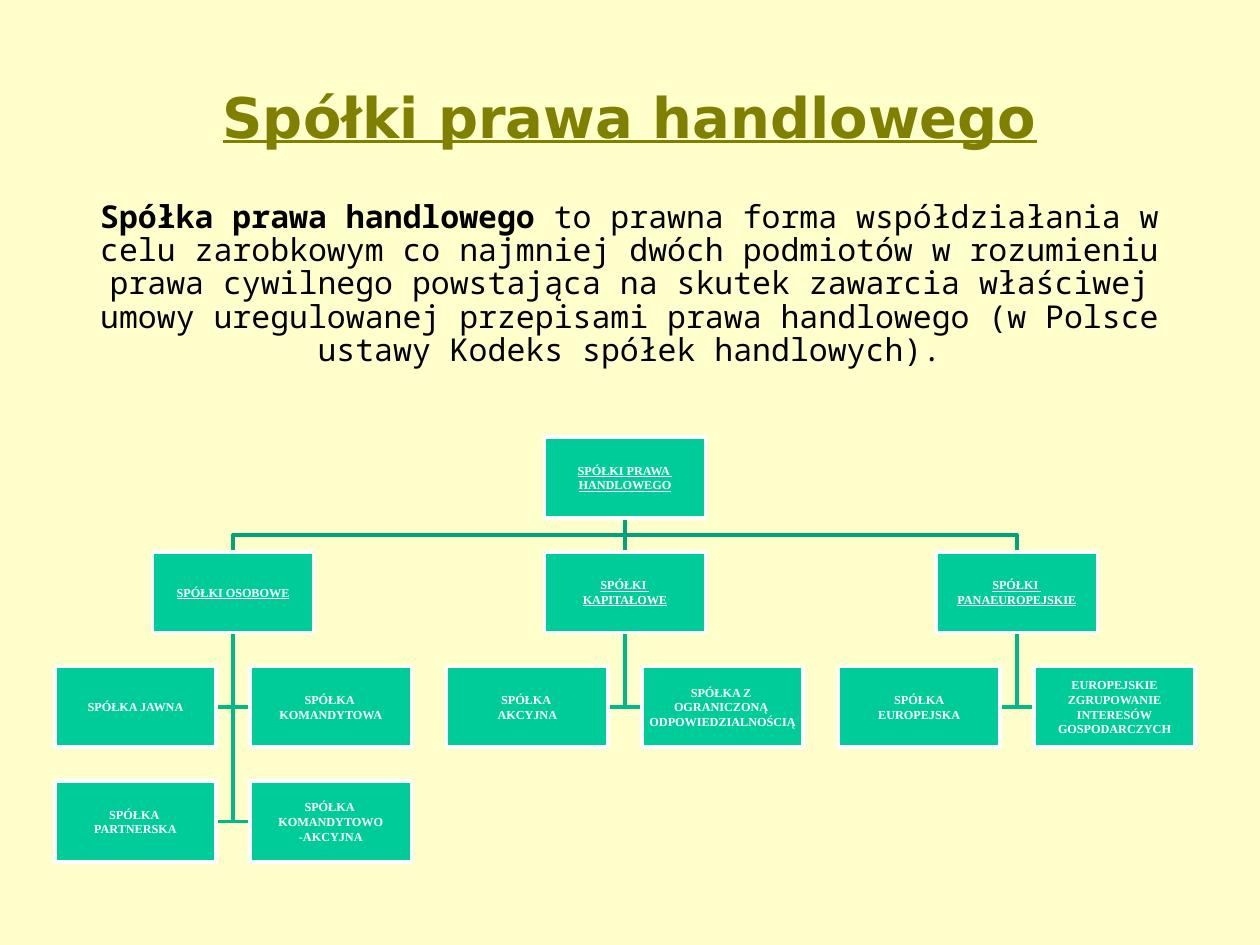
from dataclasses import dataclass

from lxml.etree import SubElement
from pptx import Presentation
from pptx.dml.color import RGBColor
from pptx.enum.shapes import MSO_CONNECTOR as CONN, MSO_SHAPE as SHAPE
from pptx.enum.text import MSO_ANCHOR as ANCHOR, PP_ALIGN as ALIGN
from pptx.oxml.ns import qn
from pptx.util import Inches, Pt

BOX_W, BOX_H = 1.28, 0.64
TOP, ROW_STEP = 3.47, 0.91
CENTER, BRANCH_STEP = 4.96, 3.11
CHILD_DX = 0.775
TRUNK, TWIG = "00A37B", "00B98B"


@dataclass
class Branch:
    title: str
    children: list[str]


ROOT = "SPÓŁKI PRAWA \nHANDLOWEGO"
BRANCHES = [
    Branch("SPÓŁKI OSOBOWE", [
        "SPÓŁKA JAWNA", "SPÓŁKA \nKOMANDYTOWA",
        "SPÓŁKA \nPARTNERSKA", "SPÓŁKA \nKOMANDYTOWO\n-AKCYJNA"]),
    Branch("SPÓŁKI \nKAPITAŁOWE", [
        "SPÓŁKA \nAKCYJNA", "SPÓŁKA Z \nOGRANICZONĄ \nODPOWIEDZIALNOŚCIĄ"]),
    Branch("SPÓŁKI \nPANAEUROPEJSKIE", [
        "SPÓŁKA\nEUROPEJSKA", "EUROPEJSKIE\nZGRUPOWANIE\nINTERESÓW\nGOSPODARCZYCH"]),
]
TERM = "Spółka prawa handlowego"
DEFINITION = (
    " to prawna forma współdziałania w celu zarobkowym co najmniej dwóch podmiotów "
    "w rozumieniu prawa cywilnego powstająca na skutek zawarcia właściwej umowy "
    "uregulowanej przepisami prawa handlowego (w Polsce ustawy Kodeks spółek handlowych).")


def rgb(color: str) -> RGBColor:
    return RGBColor.from_string(color)


def add_text(p, text: str, *, font: str, size: float, color: str,
             bold: bool = False, underline: bool = False) -> None:
    p.alignment = ALIGN.CENTER
    r = p.add_run()
    r.text = text
    r.font.name, r.font.size = font, Pt(size)
    r.font.bold, r.font.underline = bold, underline
    r.font.color.rgb = rgb(color)


def place(sp, x: float, y: float, w: float, h: float) -> None:
    sp.left, sp.top, sp.width, sp.height = map(Inches, (x, y, w, h))


def row_top(level: int) -> float:
    return TOP + level * ROW_STEP


def add_box(s, cx: float, level: int, text: str, underline: bool = False) -> None:
    sp = s.shapes.add_shape(SHAPE.RECTANGLE, Inches(cx - BOX_W / 2),
                            Inches(row_top(level)), Inches(BOX_W), Inches(BOX_H))
    sp.shadow.inherit = False
    sp.fill.solid()
    sp.fill.fore_color.rgb = rgb("00CC99")
    sp.line.color.rgb, sp.line.width = rgb("FFFFFF"), Pt(2)
    tf = sp.text_frame
    tf.word_wrap = False
    tf.vertical_anchor = ANCHOR.MIDDLE
    tf.margin_left = tf.margin_right = tf.margin_top = tf.margin_bottom = 0
    for i, line in enumerate(text.split("\n")):
        p = tf.add_paragraph() if i else tf.paragraphs[0]
        add_text(p, line, font="Times New Roman", size=7, color="FFFFFF",
                 bold=True, underline=underline)


def add_link(s, color: str, *points: tuple[float, float]) -> None:
    pts = [(Inches(x), Inches(y)) for x, y in points]
    if len(pts) == 2:
        sp = s.shapes.add_connector(CONN.STRAIGHT, *pts[0], *pts[1])
        SubElement(sp._element.spPr, qn("a:effectLst"))
    else:
        fb = s.shapes.build_freeform(*pts[0])
        fb.add_line_segments(pts[1:], close=False)
        sp = fb.convert_to_shape()
        sp.fill.background()
        sp.shadow.inherit = False
    sp.line.color.rgb, sp.line.width = rgb(color), Pt(2)


def child_spot(cx: float, i: int) -> tuple[float, int]:
    return cx + (CHILD_DX if i % 2 else -CHILD_DX), 2 + i // 2


def add_branch_links(s, cx: float, branch: Branch) -> None:
    start, end = row_top(0) + BOX_H, row_top(1)
    mid = (start + end) / 2
    bends = [] if cx == CENTER else [(CENTER, mid), (cx, mid)]
    add_link(s, TRUNK, (CENTER, start), *bends, (cx, end))
    for i in range(len(branch.children)):
        x, level = child_spot(cx, i)
        y = row_top(level) + BOX_H / 2
        edge = x + (-BOX_W / 2 if x > cx else BOX_W / 2)
        add_link(s, TWIG, (cx, row_top(1) + BOX_H), (cx, y), (edge, y))


def add_branch_boxes(s, cx: float, branch: Branch) -> None:
    add_box(s, cx, 1, branch.title, underline=True)
    for i, text in enumerate(branch.children):
        add_box(s, *child_spot(cx, i), text)


def add_heading(s) -> None:
    title, body = s.placeholders
    place(title, 0.5, 0.3, 9, 1.25)
    title.text_frame.vertical_anchor = ANCHOR.MIDDLE
    add_text(title.text_frame.paragraphs[0], "Spółki prawa handlowego",
             font="DejaVu Sans", size=32, color="808000", bold=True, underline=True)
    place(body, 0.5, 1.55, 8.99, 5.15)
    p = body.text_frame.paragraphs[0]
    p.space_before, p.line_spacing = Pt(8), 0.88
    for text, bold in ((TERM, True), (DEFINITION, False)):
        add_text(p, text, font="Noto Sans Mono", size=18, color="000000", bold=bold)
    pPr = p._p.get_or_add_pPr()
    pPr.set("marL", "0")
    pPr.set("indent", "0")
    SubElement(pPr, qn("a:buNone"))


def main() -> None:
    """Build the slide on commercial companies and save it."""
    prs = Presentation()
    prs.slide_width, prs.slide_height = Inches(10), Inches(7.5)
    s = prs.slides.add_slide(prs.slide_layouts[1])
    s.background.fill.solid()
    s.background.fill.fore_color.rgb = rgb("FFFFCC")
    add_heading(s)
    centers = [CENTER + (i - 1) * BRANCH_STEP for i in range(len(BRANCHES))]
    for cx, branch in zip(centers, BRANCHES):
        add_branch_links(s, cx, branch)
    add_box(s, CENTER, 0, ROOT, underline=True)
    for cx, branch in zip(centers, BRANCHES):
        add_branch_boxes(s, cx, branch)
    prs.save("out.pptx")


if __name__ == "__main__":
    main()
